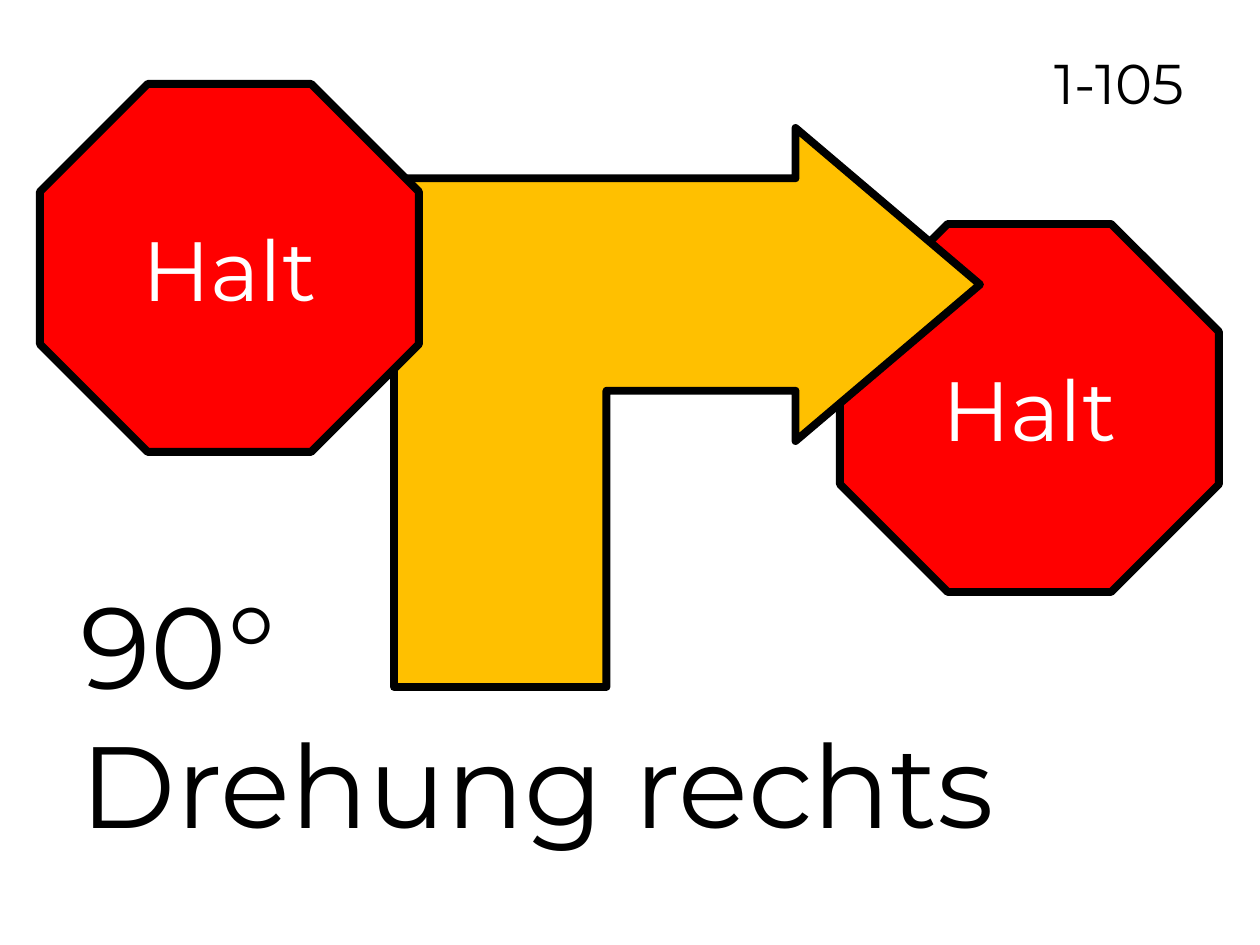
from pptx import Presentation
from pptx.dml.color import RGBColor
from pptx.enum.shapes import MSO_SHAPE
from pptx.enum.text import MSO_ANCHOR, MSO_AUTO_SIZE, PP_ALIGN
from pptx.util import Emu, Pt

OCTAGON, BENT_ARROW = MSO_SHAPE.OCTAGON, MSO_SHAPE.BENT_ARROW
TOP, MIDDLE = MSO_ANCHOR.TOP, MSO_ANCHOR.MIDDLE
LEFT, CENTER = PP_ALIGN.LEFT, PP_ALIGN.CENTER
NO_AUTOFIT = MSO_AUTO_SIZE.NONE

BLACK = RGBColor(0x00, 0x00, 0x00)
WHITE = RGBColor(0xFF, 0xFF, 0xFF)
RED = RGBColor(0xFF, 0x00, 0x00)
AMBER = RGBColor(0xFF, 0xC0, 0x00)

EMU_PER_PX = 914400 / 126
TITLE_ONLY = 5


def px(length):
    return Emu(round(length * EMU_PER_PX))


def apply(target, values):
    for name, value in values.items():
        setattr(target, name, value)


class SignSlide:
    """Holds the style of an exercise sign and the slide it is drawn on."""

    font = "Montserrat"
    outline = Pt(4.5)

    def __init__(self, deck):
        self.slide = deck.slides.add_slide(deck.slide_layouts[TITLE_ONLY])

    def wording(self, frame, text, size, color, align, anchor):
        frame.text = text
        apply(frame, {"word_wrap": True, "auto_size": NO_AUTOFIT, "vertical_anchor": anchor})
        for paragraph in frame.paragraphs:
            paragraph.alignment = align
            for run in paragraph.runs:
                apply(run.font, {"name": self.font, "size": Pt(size)})
                run.font.color.rgb = color

    def title(self, text, box, size):
        heading = self.slide.shapes.title
        apply(heading, dict(zip(("left", "top", "width", "height"), map(px, box))))
        self.wording(heading.text_frame, text, size, BLACK, LEFT, TOP)

    def label(self, text, box, size):
        number = self.slide.shapes.add_textbox(*map(px, box))
        self.wording(number.text_frame, text, size, BLACK, LEFT, TOP)

    def block(self, kind, box, color):
        block = self.slide.shapes.add_shape(kind, *map(px, box))
        block.shadow.inherit = False
        block.fill.solid()
        block.fill.fore_color.rgb = color
        block.line.color.rgb = BLACK
        block.line.width = self.outline
        return block

    def stop_sign(self, left, top):
        sign = self.block(OCTAGON, (left, top, 379, 368), RED)
        self.wording(sign.text_frame, "Halt", 48, WHITE, CENTER, MIDDLE)

    def turn_arrow(self, box, proportions):
        arrow = self.block(BENT_ARROW, box, AMBER)
        for index, proportion in enumerate(proportions):
            arrow.adjustments[index] = proportion


def main():
    deck = Presentation()
    apply(deck, {"slide_width": px(1260), "slide_height": px(945)})
    sign = SignSlide(deck)
    sign.title("90°\nDrehung rechts", (68, 568, 1005, 292), 66)
    sign.label("1-105", (1042, 42, 195, 81), 32)
    sign.stop_sign(840, 224)
    sign.turn_arrow((394, 128, 586, 559), (0.38, 0.28, 0.33, 0))
    sign.stop_sign(40, 84)
    deck.save("out.pptx")


if __name__ == "__main__":
    main()
